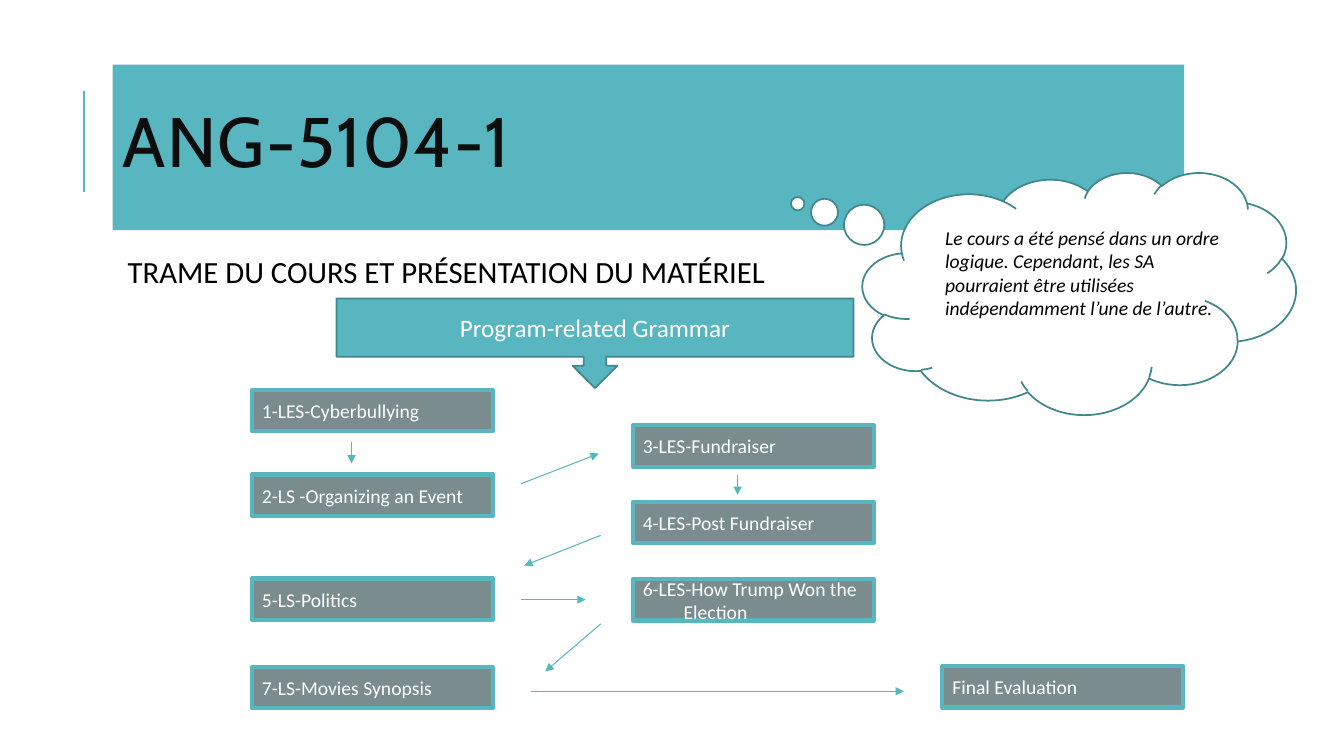
from lxml.etree import SubElement
from pptx import Presentation
from pptx.dml.color import RGBColor
from pptx.enum.shapes import MSO_CONNECTOR as CONN, MSO_SHAPE as SHAPE
from pptx.enum.text import MSO_ANCHOR as ANCHOR, PP_ALIGN as ALIGN
from pptx.oxml.ns import qn
from pptx.util import Cm, Pt

TEAL = RGBColor(0x58, 0xB6, 0xC0)
DARK_TEAL = RGBColor(0x41, 0x87, 0x8E)
GREY = RGBColor(0x7A, 0x8C, 0x8E)
INK = RGBColor(0x0D, 0x0D, 0x0D)
BLACK = RGBColor(0, 0, 0)
WHITE = RGBColor(0xFF, 0xFF, 0xFF)

LEFT_COL, RIGHT_COL, LAST_COL = 6.35, 15.95, 23.75
STEPS = [
    (LEFT_COL, 9.83, ["1-LES-Cyberbullying"]),
    (LEFT_COL, 11.96, ["2-LS -Organizing an Event"]),
    (RIGHT_COL, 10.72, ["3-LES-Fundraiser"]),
    (RIGHT_COL, 12.65, ["4-LES-Post Fundraiser"]),
    (LEFT_COL, 14.58, ["5-LS-Politics"]),
    (RIGHT_COL, 14.6, ["6-LES-How Trump Won the", "Election"]),
    (LEFT_COL, 16.81, ["7-LS-Movies Synopsis"]),
    (LAST_COL, 16.79, ["Final Evaluation"]),
]
ARROWS = [
    (8.86, 11.15, 8.86, 11.68),
    (13.13, 12.19, 15.09, 11.43),
    (18.59, 11.96, 18.59, 12.47),
    (15.14, 13.49, 13.21, 14.25),
    (13.13, 15.11, 14.76, 15.11),
    (15.14, 15.72, 13.74, 16.92),
    (13.39, 17.42, 22.78, 17.42),
]


def write(s, lines, anchor=ANCHOR.MIDDLE, align=ALIGN.LEFT, **font):
    """Write one paragraph per line and return the text frame."""
    tf = s.text_frame
    tf.word_wrap = True
    tf.vertical_anchor = anchor
    for i, line in enumerate(lines):
        p = tf.add_paragraph() if i else tf.paragraphs[0]
        p.alignment = align
        r = p.add_run()
        r.text = line
        color = font.get("color", WHITE)
        r.font.color.rgb = color
        formats = {"name": "Calibri", "size": Pt(14), **font}
        for key, value in formats.items():
            if key != "color":
                setattr(r.font, key, value)
    return tf


def set_margin(p, left):
    """Indent a whole paragraph from the left."""
    p._p.get_or_add_pPr().set("marL", str(Cm(left)))


def add_box(sp, kind, at, fill, line=None, width=0):
    """Add a filled preset shape, outlined if a line colour is given."""
    s = sp.add_shape(kind, *map(Cm, at))
    s.shadow.inherit = False
    s.fill.solid()
    s.fill.fore_color.rgb = fill
    if line is None:
        s.line.fill.background()
    else:
        s.line.color.rgb = line
        s.line.width = Pt(width)
    return s


def add_text(sp, at, lines, **font):
    """Add a top-anchored text box."""
    return write(sp.add_textbox(*map(Cm, at)), lines, ANCHOR.TOP, **font)


def add_line(sp, ends, width, arrow=False):
    """Add a straight teal line, with an arrowhead at its end if asked."""
    s = sp.add_connector(CONN.STRAIGHT, *map(Cm, ends))
    s.line.color.rgb = TEAL
    s.line.width = Pt(width)
    if arrow:
        SubElement(s.line._get_or_add_ln(), qn("a:tailEnd"), type="triangle")
    SubElement(s._element.spPr, qn("a:effectLst"))


def add_step(sp, left, top, lines):
    """Add one course step, its second line hanging to the right."""
    s = add_box(sp, SHAPE.RECTANGLE, (left, top, 6.07, 1.04), GREY, TEAL, 3)
    tf = write(s, lines)
    for p in tf.paragraphs[1:]:
        set_margin(p, 1.03)


def add_header(sp):
    """Add the title band, its side rule and the subtitle."""
    add_line(sp, (2.11, 4.83, 2.11, 2.29), 1.5)
    band = add_box(sp, SHAPE.RECTANGLE, (2.84, 1.63, 27, 4.17), TEAL)
    tf = write(band, ["ANG-5104-1"], name="Cabin", size=Pt(50), color=INK)
    p = tf.paragraphs[0]
    p.line_spacing = 0.8
    p.runs[0].font._element.set("spc", "100")

    tf = add_text(sp, (2.84, 6.35, 28.07, 12.24),
                  ["TRAME DU COURS ET PRÉSENTATION DU MATÉRIEL"],
                  size=Pt(22), color=BLACK)
    for side in ("left", "top", "right", "bottom"):
        setattr(tf, f"margin_{side}", Cm(0.13))
    p = tf.paragraphs[0]
    p.line_spacing = 0.9
    set_margin(p, 0.25)


def add_thought(sp):
    """Add the thought cloud with its remark."""
    cloud = add_box(sp, SHAPE.CLOUD_CALLOUT, (21.74, 4.34, 10.92, 6.1),
                    WHITE, DARK_TEAL, 1.25)
    cloud.adjustments[0] = -0.65
    cloud.adjustments[1] = -0.37
    add_text(sp, (23.57, 5.56, 7.9, 2.64),
             ["Le cours a été pensé dans un ordre logique. Cependant, les SA "
              "pourraient être utilisées indépendamment l’une de l’autre."],
             color=BLACK, italic=True)


def main():
    """Build the course outline slide."""
    prs = Presentation()
    prs.slide_width, prs.slide_height = Cm(33.87), Cm(19.05)
    sp = prs.slides.add_slide(prs.slide_layouts[6]).shapes
    add_header(sp)
    grammar = add_box(sp, SHAPE.DOWN_ARROW_CALLOUT, (8.48, 7.52, 13.03, 2.26),
                      TEAL, DARK_TEAL, 1.25)
    write(grammar, ["Program-related Grammar"], align=ALIGN.CENTER, size=Pt(18))
    for step in STEPS:
        add_step(sp, *step)
    for ends in ARROWS:
        add_line(sp, ends, 0.75, arrow=True)
    add_thought(sp)
    prs.save("out.pptx")


if __name__ == "__main__":
    main()
